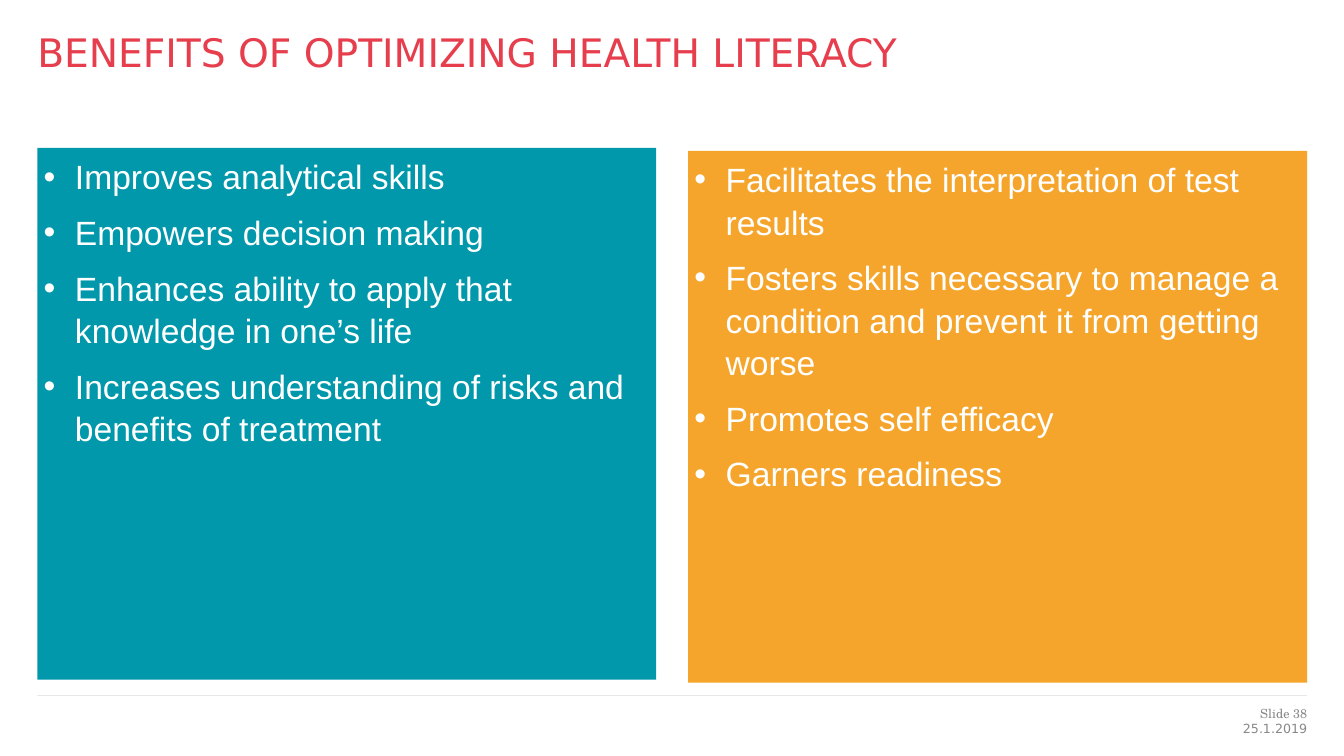
from dataclasses import dataclass

from lxml import etree
from pptx import Presentation
from pptx.dml.color import RGBColor
from pptx.enum import shapes, text
from pptx.oxml import ns
from pptx.util import Cm, Pt


@dataclass(frozen=True)
class Theme:
    title_color: str = "E63E4D"
    panel_text: str = "FFFFFF"
    footer_color: str = "898989"
    rule_color: str = "262626"
    rule_opacity: int = 31
    heading_font: str = "DejaVu Sans"
    body_font: str = "Arial"
    number_font: str = "TeX Gyre Schola"
    title_size: float = 28
    body_size: float = 24
    footer_size: float = 9
    bullet_gap: float = 9.6
    line_spacing: float = 1.05


THEME = Theme()
TITLE = "BENEFITS OF OPTIMIZING HEALTH LITERACY"

# Panels: fill colour, top in cm, bullet points
PANELS = [
    ("0098AA", 3.73, [
        "Improves analytical skills",
        "Empowers decision making",
        "Enhances ability to apply that knowledge in one’s life",
        "Increases understanding of risks and benefits of treatment",
    ]),
    ("F5A52B", 3.8, [
        "Facilitates the interpretation of test results",
        "Fosters skills necessary to manage a condition and prevent it from getting worse",
        "Promotes self efficacy",
        "Garners readiness",
    ]),
]

# Footer: wording, font, top, width and height in cm
FOOTER = [
    ("25.1.2019", THEME.heading_font, 18.16, 4.7, 0.51),
    ("Slide 38", THEME.number_font, 17.78, 3.78, 0.36),
]

PAGE_WIDTH, PAGE_HEIGHT = 33.87, 19.05
MARGIN, CONTENT_WIDTH = 0.94, 32
RIGHT_EDGE = MARGIN + CONTENT_WIDTH
PANEL_WIDTH, PANEL_HEIGHT = 15.6, 13.4
PANEL_STEP = CONTENT_WIDTH - PANEL_WIDTH
PANEL_INSET, BULLET_INDENT = 0.16, 0.79
RULE_TOP = 17.52


def rgb(value):
    return RGBColor.from_string(value)


def prepare_frame(frame, inset=0):
    frame.word_wrap = True
    frame.vertical_anchor = text.MSO_ANCHOR.TOP
    frame.margin_left = frame.margin_right = Cm(inset)
    frame.margin_top = frame.margin_bottom = Cm(inset)


def style_runs(para, font, size, color):
    for span in para.runs:
        span.font.name = font
        span.font.size = Pt(size)
        span.font.color.rgb = rgb(color)


def add_label(page, wording, place, font, size, color, align=text.PP_ALIGN.LEFT):
    box = page.shapes.add_textbox(*map(Cm, place))
    prepare_frame(box.text_frame)
    box.text_frame.text = wording
    para = box.text_frame.paragraphs[0]
    para.alignment = align
    style_runs(para, font, size, color)


def add_bullet(para):
    """Give the paragraph a hanging round bullet in the panel text colour."""
    properties = para._p.get_or_add_pPr()
    properties.set("marL", str(Cm(BULLET_INDENT)))
    properties.set("indent", str(-Cm(BULLET_INDENT)))
    color = etree.SubElement(properties, ns.qn("a:buClr"))
    etree.SubElement(color, ns.qn("a:srgbClr"), val=THEME.panel_text)
    etree.SubElement(properties, ns.qn("a:buFont"), typeface=THEME.body_font)
    etree.SubElement(properties, ns.qn("a:buChar"), char="•")


def add_panel(page, left, top, fill, points):
    panel = page.shapes.add_shape(
        shapes.MSO_SHAPE.RECTANGLE,
        Cm(left), Cm(top), Cm(PANEL_WIDTH), Cm(PANEL_HEIGHT))
    panel.shadow.inherit = False
    panel.fill.solid()
    panel.fill.fore_color.rgb = rgb(fill)
    panel.line.fill.background()
    frame = panel.text_frame
    prepare_frame(frame, PANEL_INSET)
    frame.text = "\n".join(points)
    for index, para in enumerate(frame.paragraphs):
        add_bullet(para)
        para.alignment = text.PP_ALIGN.LEFT
        para.line_spacing = THEME.line_spacing
        if index:
            para.space_before = Pt(THEME.bullet_gap)
        style_runs(para, THEME.body_font, THEME.body_size, THEME.panel_text)


def add_footer_rule(page):
    rule = page.shapes.add_connector(
        shapes.MSO_CONNECTOR.STRAIGHT,
        Cm(MARGIN), Cm(RULE_TOP), Cm(RIGHT_EDGE), Cm(RULE_TOP))
    rule.line.width = Pt(0.25)
    rule.line.color.rgb = rgb(THEME.rule_color)
    color = rule._element.spPr.find(".//" + ns.qn("a:srgbClr"))
    etree.SubElement(color, ns.qn("a:alpha"), val=str(THEME.rule_opacity * 1000))
    etree.SubElement(rule._element.spPr, ns.qn("a:effectLst"))


def main():
    deck = Presentation()
    deck.slide_width, deck.slide_height = Cm(PAGE_WIDTH), Cm(PAGE_HEIGHT)
    page = deck.slides.add_slide(deck.slide_layouts[6])

    add_footer_rule(page)
    add_label(page, TITLE, (MARGIN, 0.71, CONTENT_WIDTH, 2.39),
              THEME.heading_font, THEME.title_size, THEME.title_color)
    for wording, font, top, width, height in FOOTER:
        add_label(page, wording, (RIGHT_EDGE - width, top, width, height), font,
                  THEME.footer_size, THEME.footer_color, text.PP_ALIGN.RIGHT)
    for column, (fill, top, points) in enumerate(PANELS):
        add_panel(page, MARGIN + column * PANEL_STEP, top, fill, points)

    deck.save("out.pptx")


if __name__ == "__main__":
    main()
